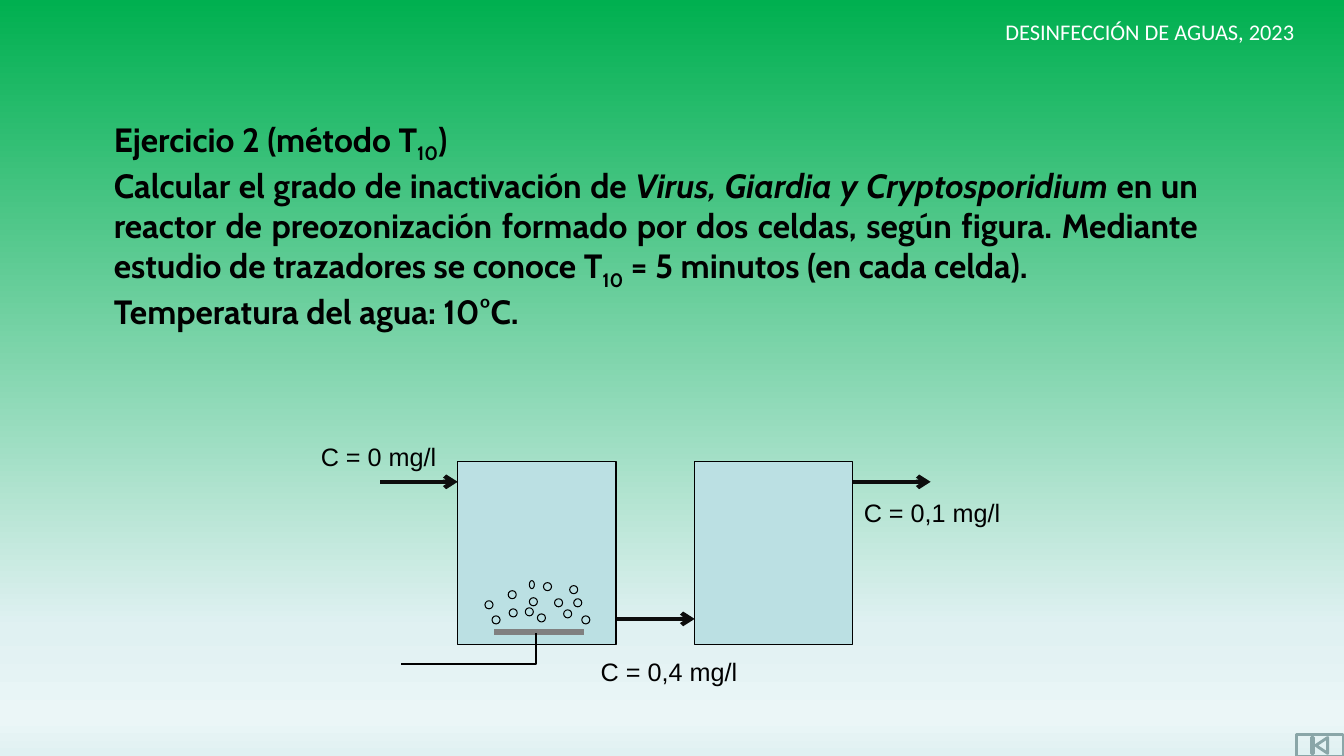
from dataclasses import dataclass

from lxml import etree
from pptx import Presentation
from pptx import util as u
from pptx.dml.color import RGBColor
from pptx.enum import shapes, text
from pptx.oxml.ns import qn


@dataclass(frozen=True)
class Theme:
    sky: tuple = ((0, "00B050"), (83, "E0F1F2"), (95, "EBF6F7"), (100, "E0F1F2"))
    water: str = "BBE0E3"
    ink: str = "000000"
    flow: str = "0D0D0D"
    diffuser: str = "808080"
    button: str = "8AA6A8"
    header: str = "FFFFFF"
    header_size: int = 16
    body_size: int = 24
    label_size: int = 18


THEME = Theme()
CELL_WIDTH, CELL_HEIGHT, CELL_TOP = 1.57, 1.81, 4.58
CELL_LEFTS = (4.54, 6.89)
PIPE_LENGTH = 0.77
BUBBLE = 0.08
BUBBLES = (
    (5.04, 5.86), (5.59, 6.05), (4.81, 5.96), (5.25, 5.93), (5.5, 5.94),
    (5.33, 6.09), (5.69, 5.94), (5.65, 5.81), (5.77, 6.11), (5.21, 6.03),
    (5.05, 6.04), (4.88, 6.11), (5.39, 5.78),
)
STATEMENT = (
    (("Ejercicio 2 (método T", ""), ("10", "sub"), (")", "")),
    (
        ("Calcular el grado de inactivación de ", ""),
        ("Virus, Giardia y Cryptosporidium ", "italic"),
        ("en un reactor de preozonización formado por dos celdas, según figura. "
         "Mediante estudio de trazadores se conoce T", ""),
        ("10", "sub"),
        (" = 5 minutos (en cada celda).", ""),
    ),
    (("Temperatura del agua: 10°C.", ""),),
)


def inches(*lengths):
    return [u.Inches(length) for length in lengths]


def paint_background(slide):
    fill = slide.background.fill
    fill.gradient()
    fill.gradient_angle = 270
    stops = slide.background._cSld.find(".//" + qn("a:gsLst"))
    for stop in list(stops):
        stops.remove(stop)
    for percent, color in THEME.sky:
        stop = etree.SubElement(stops, qn("a:gs"), pos=str(percent * 1000))
        etree.SubElement(stop, qn("a:srgbClr"), val=color)


def add_text(slide, box, paragraphs, *, font, size, color,
             align=text.PP_ALIGN.CENTER, bold=False, margin=0.1):
    """Paragraphs are sequences of (wording, style) runs."""
    frame = slide.shapes.add_textbox(*inches(*box)).text_frame
    frame.word_wrap = True
    frame.margin_left = frame.margin_right = u.Inches(margin)
    for index, runs in enumerate(paragraphs):
        paragraph = frame.add_paragraph() if index else frame.paragraphs[0]
        paragraph.alignment = align
        for wording, style in runs:
            run = paragraph.add_run()
            run.text = wording
            run.font.name = font
            run.font.size = u.Pt(size)
            run.font.bold = bold
            run.font.italic = style == "italic"
            run.font.color.rgb = RGBColor.from_string(color)
            if style == "sub":
                run._r.get_or_add_rPr().set("baseline", "-25000")


def style_outline(shape, fill, line, width):
    shape.shadow.inherit = False
    if fill:
        shape.fill.solid()
        shape.fill.fore_color.rgb = RGBColor.from_string(fill)
    else:
        shape.fill.background()
    shape.line.color.rgb = RGBColor.from_string(line)
    shape.line.width = u.Pt(width)


def add_preset(slide, preset, box, fill=THEME.water, line=THEME.ink, width=0.75):
    shape = slide.shapes.add_shape(preset, *inches(*box))
    style_outline(shape, fill, line, width)


def add_line(slide, left, top, length, color, width, arrow=False):
    line = slide.shapes.add_connector(
        shapes.MSO_CONNECTOR.STRAIGHT, *inches(left, top, left + length, top))
    line.line.color.rgb = RGBColor.from_string(color)
    line.line.width = u.Pt(width)
    if arrow:
        etree.SubElement(line.line._get_or_add_ln(), qn("a:tailEnd"), type="arrow")
    etree.SubElement(line._element.spPr, qn("a:effectLst"))


def add_air_pipe(slide):
    start, *bends = [inches(*point) for point in
                     ((5.32, 6.28), (5.32, 6.59), (3.98, 6.59))]
    builder = slide.shapes.build_freeform(*start)
    builder.add_line_segments(bends, close=False)
    style_outline(builder.convert_to_shape(), None, THEME.ink, 1.5)


def add_concentration(slide, left, top, value):
    add_text(slide, (left, top, CELL_WIDTH, 0.4), [[(f"C = {value} mg/l", "")]],
             font="Arial", size=THEME.label_size, color=THEME.ink, margin=0)


def main():
    prs = Presentation()
    prs.slide_width, prs.slide_height = inches(13.33, 7.5)
    slide = prs.slides.add_slide(prs.slide_layouts[6])
    paint_background(slide)

    # Navigation button and course header
    add_preset(slide, shapes.MSO_SHAPE.ACTION_BUTTON_BEGINNING,
               (12.86, 7.29, 0.46, 0.21), None, THEME.button, 2)
    add_text(slide, (9.82, 0.13, 3.17, 0.37),
             [[("DESINFECCIÓN DE AGUAS, 2023", "")]],
             font="Calibri", size=THEME.header_size, color=THEME.header)

    # Exercise statement
    add_text(slide, (1.03, 1.13, 10.95, 2.12), STATEMENT, font="Cabin",
             size=THEME.body_size, color=THEME.ink, bold=True,
             align=text.PP_ALIGN.JUSTIFY)

    # Reactor cells
    for left in CELL_LEFTS:
        add_preset(slide, shapes.MSO_SHAPE.RECTANGLE,
                   (left, CELL_TOP, CELL_WIDTH, CELL_HEIGHT))

    # Ozone bubbles, one of them narrower, above the diffuser
    for left, top in BUBBLES:
        add_preset(slide, shapes.MSO_SHAPE.OVAL, (left, top, BUBBLE, BUBBLE))
    add_preset(slide, shapes.MSO_SHAPE.OVAL, (5.25, 5.76, 0.05, BUBBLE))
    add_line(slide, 4.9, 6.27, 0.89, THEME.diffuser, 4.5)
    add_air_pipe(slide)

    # Water flow: inlet, passage between cells, outlet
    for left, top in ((3.77, 4.78), (6.12, 6.14), (8.46, 4.78)):
        add_line(slide, left, top, PIPE_LENGTH, THEME.flow, 3, arrow=True)

    # Ozone concentrations
    for left, top, value in ((2.97, 4.33, "0"), (5.85, 6.46, "0,4"),
                             (8.46, 4.88, "0,1")):
        add_concentration(slide, left, top, value)

    prs.save("out.pptx")


if __name__ == "__main__":
    main()
